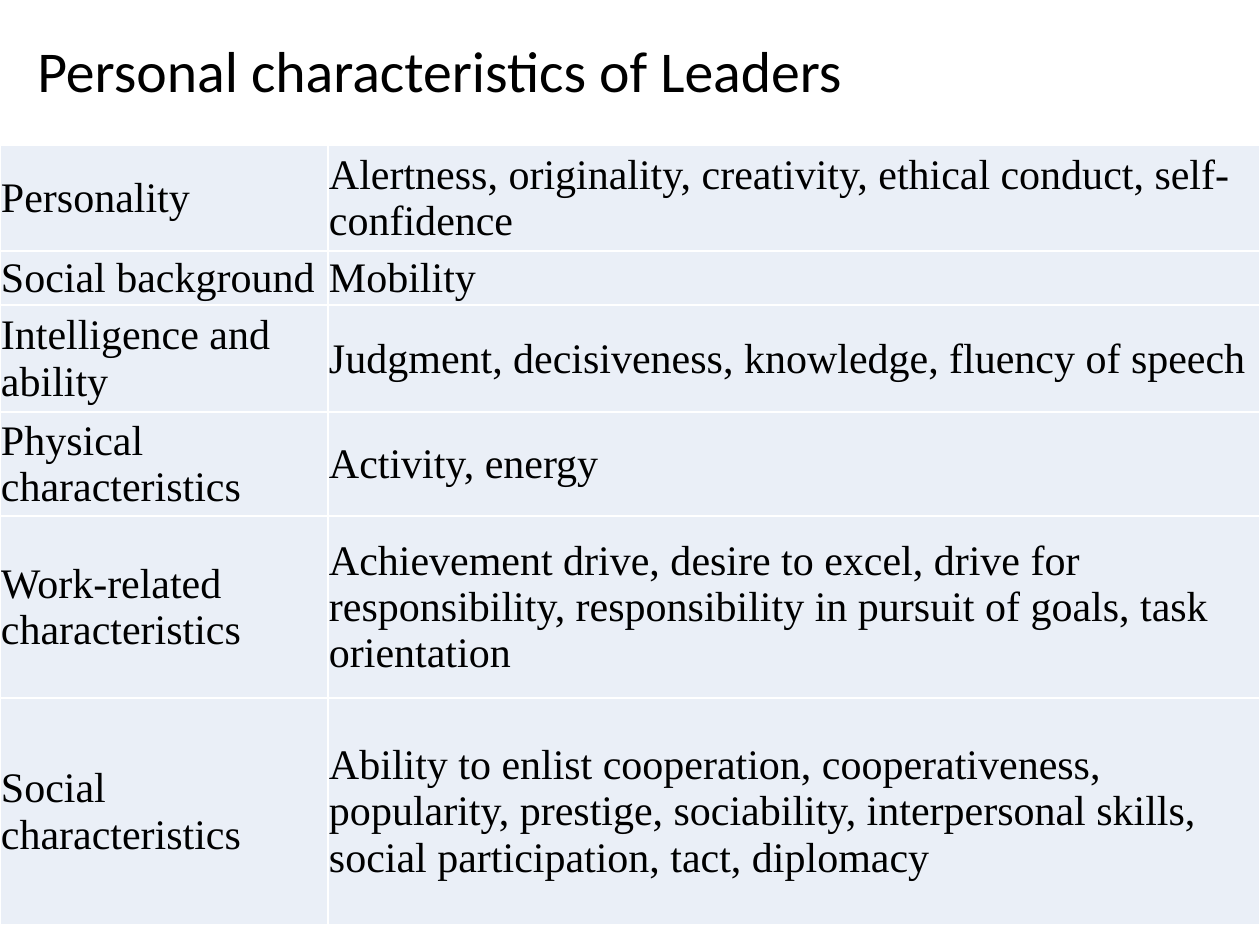
from dataclasses import dataclass

from lxml import etree
from pptx import Presentation
from pptx import util as u
from pptx.dml import color
from pptx.enum import text
from pptx.oxml import ns

HUES = {"ink": "000000", "cell": "EAEFF7", "rule": "FFFFFF"}
WIDE, HIGH = 1260, 945


@dataclass
class Trait:
    name: str
    detail: str
    high: int


TRAITS = [
    Trait("Personality",
          "Alertness, originality, creativity, ethical conduct, self-confidence", 106),
    Trait("Social background", "Mobility", 54),
    Trait("Intelligence and ability",
          "Judgment, decisiveness, knowledge, fluency of speech", 107),
    Trait("Physical characteristics", "Activity, energy", 104),
    Trait("Work-related characteristics",
          "Achievement drive, desire to excel, drive for responsibility, "
          "responsibility in pursuit of goals, task orientation", 182),
    Trait("Social characteristics",
          "Ability to enlist cooperation, cooperativeness, popularity, prestige, "
          "sociability, interpersonal skills, social participation, tact, diplomacy", 227),
]
COLS = [328, 932]


def px(n: int) -> u.Emu:
    return u.Emu(round(n * 914400 / 126))


def style(frame, face: str, size: int) -> None:
    for run in frame.paragraphs[0].runs:
        run.font.name = face
        run.font.size = u.Pt(size)
        run.font.color.rgb = color.RGBColor.from_string(HUES["ink"])


def edge(cell) -> None:
    props = cell._tc.get_or_add_tcPr()
    for side in ("lnL", "lnR", "lnT", "lnB"):
        line = etree.SubElement(props, ns.qn(f"a:{side}"), w=str(u.Pt(1)))
        fill = etree.SubElement(line, ns.qn("a:solidFill"))
        etree.SubElement(fill, ns.qn("a:srgbClr"), val=HUES["rule"])


def fill_cell(cell, words: str) -> None:
    edge(cell)
    cell.fill.solid()
    cell.fill.fore_color.rgb = color.RGBColor.from_string(HUES["cell"])
    cell.margin_left = cell.margin_right = cell.margin_top = px(1)
    cell.margin_bottom = 0
    cell.vertical_anchor = text.MSO_ANCHOR.MIDDLE
    cell.text_frame.text = words
    style(cell.text_frame, "Times New Roman", 24)


def add_title(slide, words: str) -> None:
    frame = slide.shapes.add_textbox(px(25), px(26), px(1086), px(95)).text_frame
    frame.word_wrap = True
    frame.vertical_anchor = text.MSO_ANCHOR.MIDDLE
    frame.text = words
    frame.paragraphs[0].line_spacing = 0.9
    style(frame, "Calibri", 33)


def add_grid(slide, traits: list[Trait]) -> None:
    high = sum(t.high for t in traits)
    grid = slide.shapes.add_table(
        len(traits), len(COLS), 0, px(145), px(WIDE), px(high)).table
    grid.first_row = grid.horz_banding = False
    for col, wide in zip(grid.columns, COLS):
        col.width = px(wide)
    for row, trait in zip(grid.rows, traits):
        row.height = px(trait.high)
        for cell, words in zip(row.cells, (trait.name, trait.detail)):
            fill_cell(cell, words)


def main() -> None:
    deck = Presentation()
    deck.slide_width, deck.slide_height = px(WIDE), px(HIGH)
    slide = deck.slides.add_slide(deck.slide_layouts[6])
    add_title(slide, "Personal characteristics of Leaders")
    add_grid(slide, TRAITS)
    deck.save("out.pptx")


if __name__ == "__main__":
    main()
